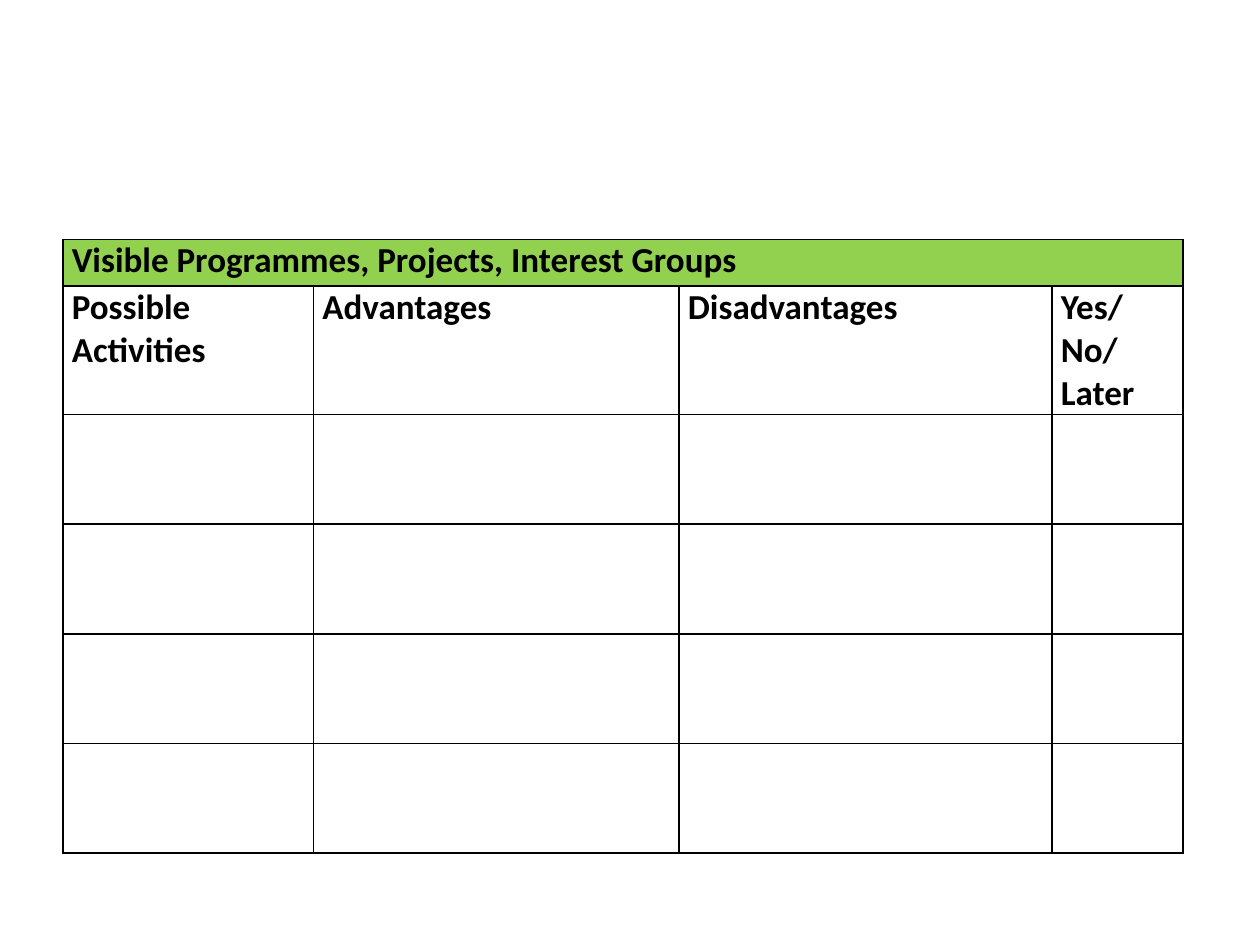
from lxml import etree
from pptx import Presentation
from pptx.dml.color import RGBColor
from pptx.oxml.ns import qn
from pptx.util import Inches, Pt

BLACK = RGBColor(0x00, 0x00, 0x00)
GREEN = RGBColor(0x92, 0xD0, 0x50)

TITLE = "Visible Programmes, Projects, Interest Groups"
HEADS = ["Possible Activities", "Advantages", "Disadvantages", "Yes/No/ Later"]
WIDTHS = [1.99, 2.9, 2.96, 1.04]
HEIGHTS = [0.37, 0.74] + [0.87] * 4


def write(cell, text):
    run = cell.text_frame.paragraphs[0].add_run()
    run.text = text
    run.font.name = "Calibri"
    run.font.size = Pt(20)
    run.font.bold = True
    run.font.color.rgb = BLACK


def add_borders(cell):
    props = cell._tc.get_or_add_tcPr()
    for spot, side in enumerate(["a:lnL", "a:lnR", "a:lnT", "a:lnB"]):
        line = etree.Element(qn(side), w=str(Pt(1)))
        fill = etree.SubElement(line, qn("a:solidFill"))
        etree.SubElement(fill, qn("a:srgbClr"), val=str(BLACK))
        props.insert(spot, line)


prs = Presentation()
prs.slide_width = Inches(10)
prs.slide_height = Inches(7.5)
slide = prs.slides.add_slide(prs.slide_layouts[6])

# Table grid
frame = slide.shapes.add_table(
    len(HEIGHTS), len(WIDTHS), Inches(0.5), Inches(1.9),
    Inches(sum(WIDTHS)), Inches(sum(HEIGHTS)))
table = frame.table
table.first_row = False
table.horz_banding = False
for col, width in zip(table.columns, WIDTHS):
    col.width = Inches(width)
for row, height in zip(table.rows, HEIGHTS):
    row.height = Inches(height)

# Cell margins, fills and borders
for cell in table.iter_cells():
    cell.margin_left = cell.margin_right = Inches(0.07)
    cell.margin_top = cell.margin_bottom = 0
    cell.fill.background()
    add_borders(cell)

# Title row across all columns
title = table.cell(0, 0)
title.merge(table.cell(0, len(WIDTHS) - 1))
title.fill.solid()
title.fill.fore_color.rgb = GREEN
write(title, TITLE)

# Column heads
for col, head in enumerate(HEADS):
    write(table.cell(1, col), head)

prs.save("out.pptx")
